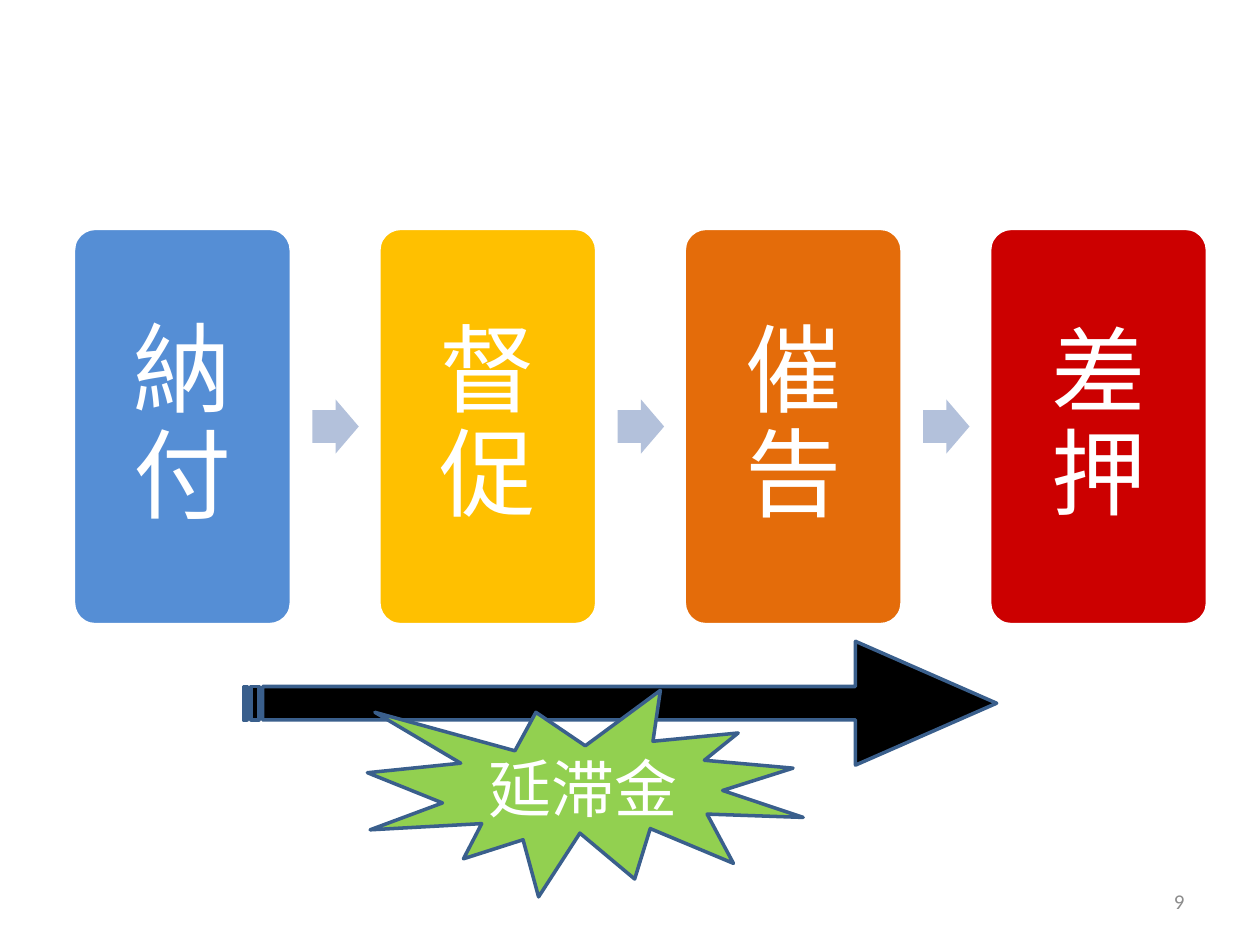
"""Build a slide showing the four collection stages and the late charge that grows alongside them."""
from dataclasses import dataclass

from pptx import Presentation
from pptx.dml.color import RGBColor
from pptx.enum.shapes import MSO_SHAPE as Shape
from pptx.enum.text import MSO_ANCHOR as Anchor, PP_ALIGN as Align
from pptx.util import Pt

WHITE = RGBColor(0xFF, 0xFF, 0xFF)
BLACK = RGBColor(0x00, 0x00, 0x00)
BLUE = RGBColor(0x55, 0x8E, 0xD5)
YELLOW = RGBColor(0xFF, 0xC0, 0x00)
ORANGE = RGBColor(0xE4, 0x6C, 0x0A)
RED = RGBColor(0xCC, 0x00, 0x00)
GREEN = RGBColor(0x92, 0xD0, 0x50)
PALE_BLUE = RGBColor(0xB3, 0xC1, 0xDB)
OUTLINE = RGBColor(0x3A, 0x5F, 0x8C)
GREY = RGBColor(0x8C, 0x8C, 0x8C)
FONT = "Calibri"

CARD_LEFT, CARD_TOP, CARD_W, CARD_H = 42, 130.5, 124.5, 226.5
CARD_STEP = 174.5
CARD_INSET = 20
ARROW_W, ARROW_H = 26.5, 31
ARROW_OFFSET = 136.5


@dataclass(frozen=True)
class Box:
    left: float
    top: float
    width: float
    height: float

    def lengths(self) -> tuple:
        return Pt(self.left), Pt(self.top), Pt(self.width), Pt(self.height)


@dataclass(frozen=True)
class Stage:
    name: str
    fill: RGBColor
    size: float


STAGES = (
    Stage("納付", BLUE, 56),
    Stage("督促", YELLOW, 55),
    Stage("催告", ORANGE, 55),
    Stage("差押", RED, 54),
)


def add_figure(s, kind: Shape, box: Box, fill: RGBColor,
               line: RGBColor | None = None, adjustments: tuple = ()):
    sp = s.shapes.add_shape(kind, *box.lengths())
    sp.shadow.inherit = False
    sp.fill.solid()
    sp.fill.fore_color.rgb = fill
    if line is None:
        sp.line.fill.background()
    else:
        sp.line.color.rgb = line
        sp.line.width = Pt(2)
    for i, value in enumerate(adjustments):
        sp.adjustments[i] = value
    return sp


def set_text(sp, text: str, size: float, color: RGBColor, align: Align = Align.CENTER):
    tf = sp.text_frame
    tf.word_wrap = True
    tf.vertical_anchor = Anchor.MIDDLE
    p = tf.paragraphs[0]
    p.text = text
    p.alignment = align
    p.font.name = FONT
    p.font.size = Pt(size)
    p.font.color.rgb = color
    return tf


def add_stage(s, stage: Stage, left: float) -> None:
    box = Box(left, CARD_TOP, CARD_W, CARD_H)
    sp = add_figure(s, Shape.ROUNDED_RECTANGLE, box, stage.fill, WHITE, (0.1,))
    tf = set_text(sp, stage.name, stage.size, WHITE)
    tf.margin_left = tf.margin_right = tf.margin_top = tf.margin_bottom = Pt(CARD_INSET)
    tf.paragraphs[0].line_spacing = 0.9


def add_step_arrow(s, left: float) -> None:
    top = CARD_TOP + (CARD_H - ARROW_H) / 2
    add_figure(s, Shape.RIGHT_ARROW, Box(left, top, ARROW_W, ARROW_H),
               PALE_BLUE, adjustments=(0.6, 0.5))


def main() -> None:
    prs = Presentation()
    prs.slide_width, prs.slide_height = Pt(720), Pt(540)
    s = prs.slides.add_slide(prs.slide_layouts[6])

    for i, stage in enumerate(STAGES):
        left = CARD_LEFT + i * CARD_STEP
        add_stage(s, stage, left)
        if i < len(STAGES) - 1:
            add_step_arrow(s, left + ARROW_OFFSET)

    number = s.shapes.add_textbox(*Box(516, 500.5, 168, 28.75).lengths())
    set_text(number, "9", 12, GREY, Align.RIGHT)

    add_figure(s, Shape.STRIPED_RIGHT_ARROW, Box(139, 366.5, 430.5, 70.75),
               BLACK, OUTLINE, (0.27, 1.14))
    seal = add_figure(s, Shape.EXPLOSION1, Box(210, 394.5, 249, 118), GREEN, OUTLINE)
    set_text(seal, "延滞金", 36, WHITE)

    prs.save("out.pptx")


if __name__ == "__main__":
    main()
